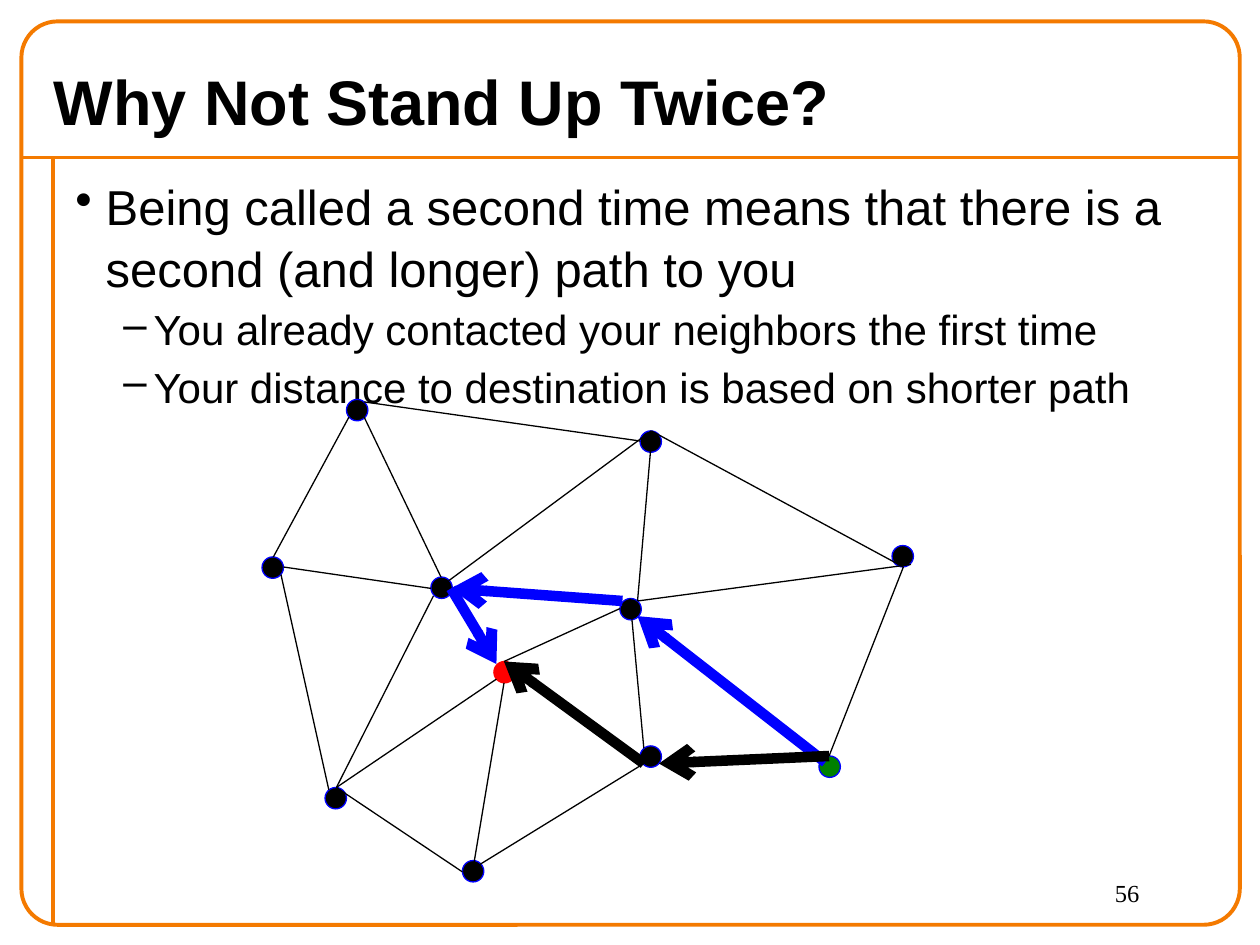
"""Build the slide on why nobody stands up twice in the network search."""
from lxml import etree
from pptx import Presentation
from pptx.dml.color import RGBColor
from pptx.enum import shapes, text
from pptx.oxml import ns
from pptx.util import Inches, Pt

COLORS = {"frame": "F47A00", "black": "000000", "blue": "0000FF",
          "red": "FF0000", "green": "008000"}
NODE_SIZE = 0.17


def add_line(page, start, end, color, width, arrow=False):
    line = page.shapes.add_connector(
        shapes.MSO_CONNECTOR.STRAIGHT, *(Inches(value) for value in start + end))
    line.line.color.rgb = RGBColor.from_string(COLORS[color])
    line.line.width = Pt(width)
    properties = line._element.spPr
    if arrow:
        etree.SubElement(line.line._get_or_add_ln(), ns.qn("a:tailEnd"), type="arrow")
    etree.SubElement(properties, ns.qn("a:effectLst"))


def add_text(page, place, lines, size, font="Arial", bold=False):
    box = page.shapes.add_textbox(*(Inches(value) for value in place))
    frame = box.text_frame
    frame.word_wrap = True
    frame.text = "\n".join(lines)
    for para in frame.paragraphs:
        for span in para.runs:
            span.font.name = font
            span.font.size = Pt(size)
            span.font.bold = bold
            span.font.color.rgb = RGBColor.from_string(COLORS["black"])
    return frame


deck = Presentation()
deck.slide_width, deck.slide_height = Inches(10), Inches(7.5)
page = deck.slides.add_slide(deck.slide_layouts[6])

add_line(page, (0.17, 1.25), (9.83, 1.25), "frame", 2.25)
add_line(page, (0.42, 1.25), (0.42, 7.33), "frame", 2.25)
border = page.shapes.add_shape(
    shapes.MSO_SHAPE.ROUNDED_RECTANGLE,
    Inches(0.17), Inches(0.17), Inches(9.67), Inches(7.17))
border.adjustments[0] = 0.04
border.shadow.inherit = False
border.fill.background()
border.line.color.rgb = RGBColor.from_string(COLORS["frame"])
border.line.width = Pt(2.25)

title = add_text(page, (0.33, 0.42, 9.5, 0.75), ["Why Not Stand Up Twice?"], 36, bold=True)
title.vertical_anchor = text.MSO_ANCHOR.MIDDLE

body = add_text(page, (0.5, 1.33, 9.25, 6), [
    "Being called a second time means that there is a second (and longer) path to you",
    "You already contacted your neighbors the first time",
    "Your distance to destination is based on shorter path",
], 28)
for index, para in enumerate(body.paragraphs):
    para.line_spacing = 1.05
    bullet, margin = ("–", 0.62) if index else ("•", 0.24)
    if index:
        para.level = 1
        para.space_before = Pt(2.4)
        para.runs[0].font.size = Pt(24)
    properties = para._p.get_or_add_pPr()
    properties.set("marL", str(Inches(margin)))
    properties.set("indent", str(Inches(-0.24)))
    etree.SubElement(properties, ns.qn("a:buChar"), char=bullet)

add_text(page, (8.75, 6.92, 1, 0.42), ["56"], 14, "Times New Roman")

nodes = [
    (2.75, 3.17, "black", "blue"), (5.08, 3.42, "black", "blue"),
    (5.08, 5.92, "black", "blue"), (3.67, 6.83, "black", "blue"),
    (3.42, 4.58, "black", "blue"), (7.08, 4.33, "black", "blue"),
    (3.92, 5.25, "red", "red"), (2.58, 6.25, "black", "blue"),
    (4.92, 4.75, "black", "blue"), (6.5, 6, "green", "blue"),
    (2.08, 4.42, "black", "blue"),
]
for left, top, fill, outline in nodes:
    node = page.shapes.add_shape(
        shapes.MSO_SHAPE.OVAL, Inches(left), Inches(top),
        Inches(NODE_SIZE), Inches(NODE_SIZE))
    node.shadow.inherit = False
    node.fill.solid()
    node.fill.fore_color.rgb = RGBColor.from_string(COLORS[fill])
    node.line.color.rgb = RGBColor.from_string(COLORS[outline])
    node.line.width = Pt(0.75)

edges = [
    ((2.89, 3.31), (3.5, 4.58)), ((2.77, 3.31), (2.17, 4.42)),
    ((2.23, 4.56), (2.61, 6.27)), ((5.17, 3.5), (5.06, 4.77)),
    ((5.17, 3.42), (7.17, 4.5)), ((7.17, 4.5), (6.58, 6)),
    ((2.67, 6.25), (3.67, 6.92)), ((5, 4.75), (5.11, 5.94)),
    ((4, 5.42), (3.75, 6.92)), ((2.25, 4.5), (3.42, 4.67)),
    ((2.67, 6.25), (3.94, 5.39)), ((3.81, 6.86), (5.11, 6.06)),
    ((2.67, 6.25), (3.44, 4.73)), ((4, 5.25), (4.92, 4.83)),
    ((5.06, 4.77), (7.23, 4.48)), ((2.89, 3.19), (5.08, 3.5)),
    ((3.56, 4.61), (5.17, 3.42)),
]
for start, end in edges:
    add_line(page, start, end, "black", 0.75)

path_steps = [
    ((6.55, 6.05), (5.06, 4.89), "blue"), ((4.94, 4.77), (3.58, 4.67), "blue"),
    ((3.58, 4.67), (3.94, 5.27), "blue"), ((6.58, 6), (5.23, 6.06), "black"),
    ((5.11, 6.06), (4, 5.25), "black"),
]
for start, end, color in path_steps:
    add_line(page, start, end, color, 6, arrow=True)

deck.save("out.pptx")
